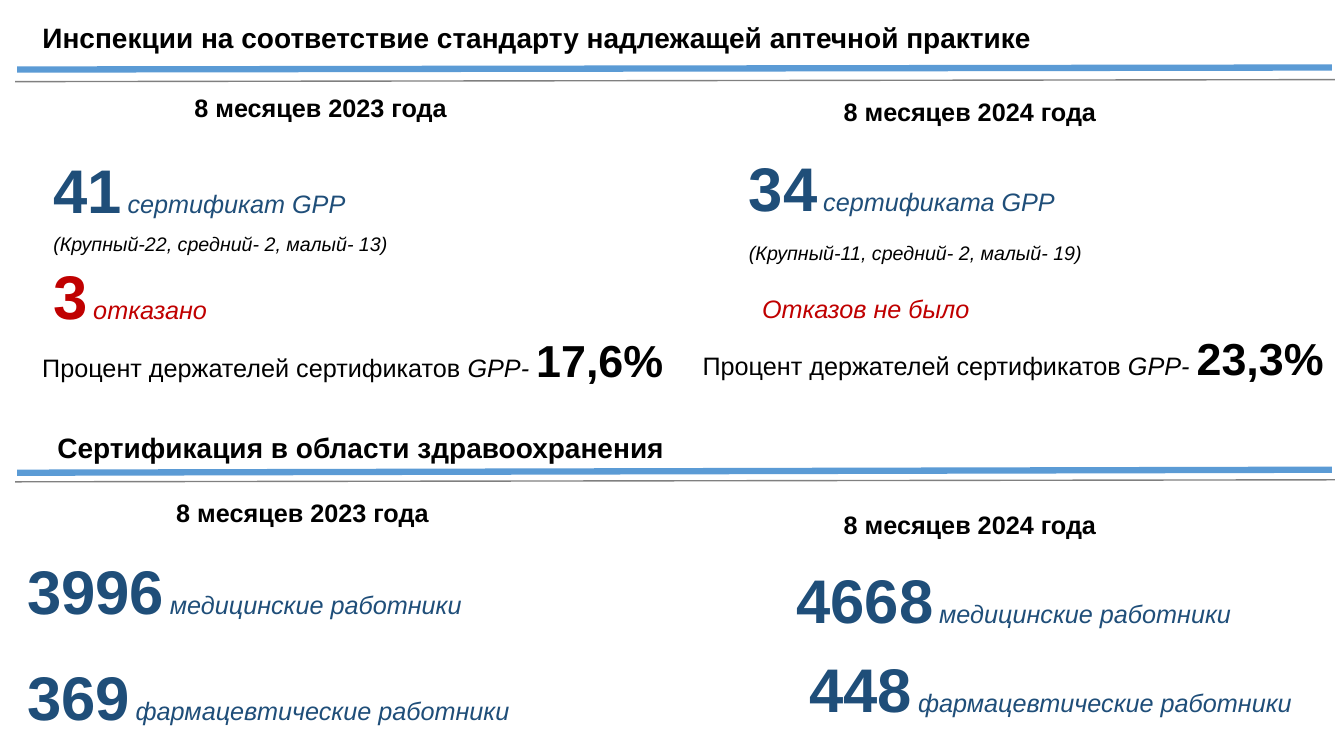
from pptx import Presentation
from pptx.dml.color import RGBColor
from pptx.enum.shapes import MSO_CONNECTOR as Connector
from pptx.enum.text import MSO_ANCHOR as Anchor, MSO_AUTO_SIZE as AutoSize, PP_ALIGN as Align
from pptx.oxml.ns import qn
from pptx.util import Inches, Pt
from lxml.etree import SubElement

BLACK, NAVY, RED = "000000", "1F4E79", "C00000"
BLUE, GRAY = "5B9BD5", "808080"


def color(value):
    return RGBColor.from_string(value)


def add_span(para, text, size=18, font="Arial", fill=BLACK, bold=False, italic=False):
    span = para.add_run()
    span.text = text
    span.font.size, span.font.name = Pt(size), font
    span.font.bold, span.font.italic = bold, italic
    span.font.color.rgb = color(fill)


class StatsSlide:
    def __init__(self, deck):
        self.page = deck.slides.add_slide(deck.slide_layouts[5])

    def format_frame(self, box):
        frame = box.text_frame
        frame.word_wrap = True
        frame.auto_size = AutoSize.NONE
        frame.vertical_anchor = Anchor.TOP
        para = frame.paragraphs[0]
        para.alignment, para.line_spacing = Align.LEFT, 1.0
        para.space_before = Pt(0)
        return para

    def title(self, left, top, width, height, text):
        box = self.page.shapes.title
        box.left, box.top = Inches(left), Inches(top)
        box.width, box.height = Inches(width), Inches(height)
        add_span(self.format_frame(box), text, size=20, bold=True)

    def box(self, left, top, width, height):
        box = self.page.shapes.add_textbox(
            Inches(left), Inches(top), Inches(width), Inches(height))
        return self.format_frame(box)

    def text(self, left, top, width, height, text, **style):
        add_span(self.box(left, top, width, height), text, **style)

    def figure(self, left, top, width, number, label, fill=NAVY):
        para = self.box(left, top, width, 0.84)
        add_span(para, number, size=44, fill=fill, bold=True)
        add_span(para, " ", font="Calibri", fill=fill)
        add_span(para, label, fill=fill, italic=True)

    def share(self, left, top, percent):
        para = self.box(left, top, 6.45, 0.64)
        add_span(para, "Процент держателей сертификатов ")
        add_span(para, "GPP- ", italic=True)
        add_span(para, percent, size=32, bold=True)

    def line(self, x1, y1, x2, y2, fill, weight):
        line = self.page.shapes.add_connector(
            Connector.STRAIGHT, Inches(x1), Inches(y1), Inches(x2), Inches(y2))
        line.line.color.rgb = color(fill)
        line.line.width = Pt(weight)
        SubElement(line._element.spPr, qn("a:effectLst"))

    def double_rule(self, blue_start, blue_end, gray_start):
        self.line(0.17, blue_start, 13.21, blue_end, BLUE, 4.5)
        self.line(0.15, gray_start, 13.24, gray_start - 0.02, GRAY, 1)


def main():
    deck = Presentation()
    deck.slide_width, deck.slide_height = Inches(13.33), Inches(7.5)
    slide = StatsSlide(deck)

    # Section headings with their rules
    slide.title(0.32, 0.15, 12.38, 0.44,
                "Инспекции на соответствие стандарту надлежащей аптечной практике")
    slide.double_rule(0.69, 0.67, 0.81)
    slide.text(0.47, 4.22, 11.1, 0.44, "Сертификация в области здравоохранения",
               size=20, bold=True)
    slide.double_rule(4.69, 4.66, 4.78)

    # Period headings
    for left, top, year in [(1.83, 0.87, 2023), (8.27, 0.91, 2024),
                            (1.65, 4.88, 2023), (8.27, 5, 2024)]:
        slide.text(left, top, 4.04, 0.4, f"8 месяцев {year} года", bold=True)

    # Large figures with labels
    for left, top, width, number, label in [
        (0.43, 1.46, 3.26, "41", "сертификат GPP"),
        (7.33, 1.44, 5.57, "34", "сертификата GPP"),
        (0.17, 5.44, 5.57, "3996", "медицинские работники"),
        (7.8, 5.53, 4.97, "4668", "медицинские работники"),
        (0.17, 6.49, 5.71, "369", "фармацевтические работники"),
        (7.93, 6.41, 5.28, "448", "фармацевтические работники"),
    ]:
        slide.figure(left, top, width, number, label)

    # Breakdown by pharmacy size
    for left, top, text in [(0.43, 2.25, "(Крупный-22, средний- 2, малый- 13)"),
                            (7.33, 2.34, "(Крупный-11, средний- 2, малый- 19)")]:
        slide.text(left, top, 4.52, 0.34, text, size=14, italic=True)

    # Refusals
    slide.figure(0.43, 2.51, 1.86, "3", "отказано", fill=RED)
    slide.text(7.46, 2.86, 2.44, 0.4, "Отказов не было", fill=RED, italic=True)

    # Share of certificate holders
    slide.share(0.32, 3.25, "17,6%")
    slide.share(6.87, 3.23, "23,3%")

    deck.save("out.pptx")


if __name__ == "__main__":
    main()
